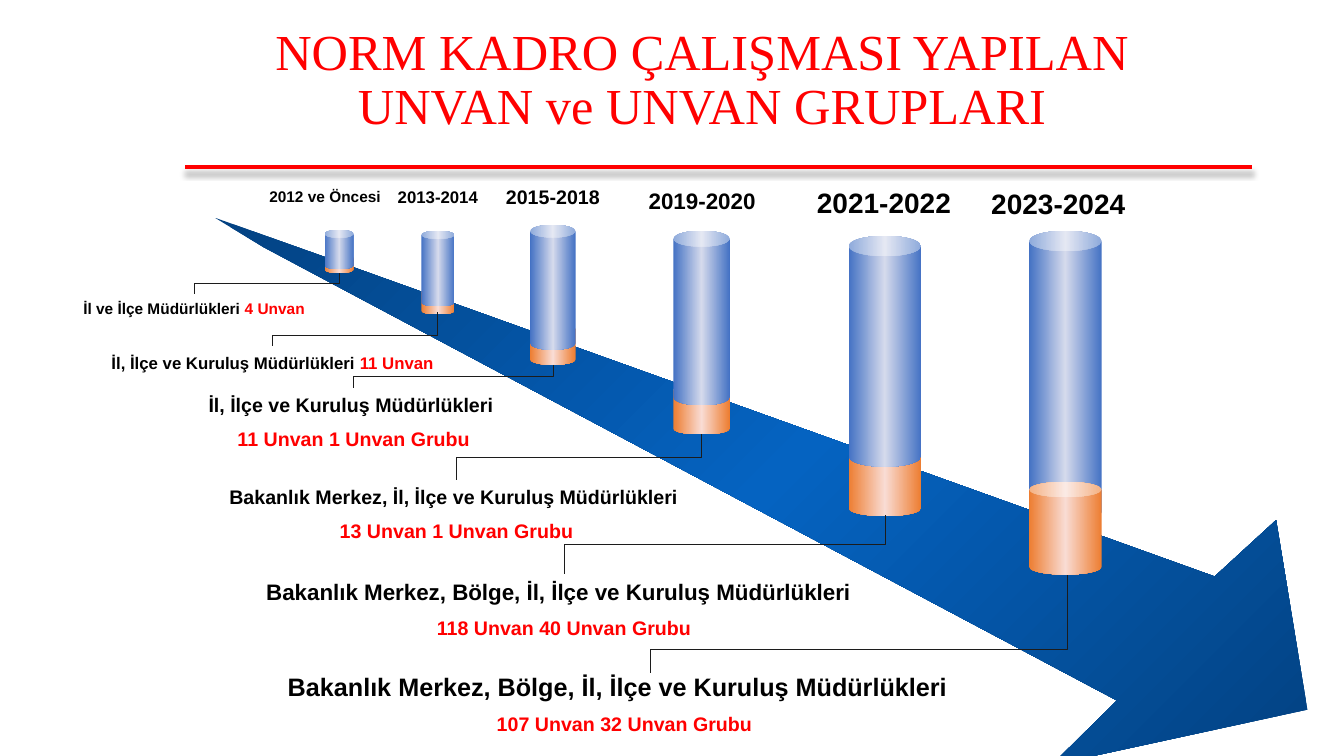
import copy

import lxml.etree
import pptx
import pptx.dml.color
import pptx.enum.shapes
import pptx.enum.text
import pptx.oxml
import pptx.oxml.ns
import pptx.util

Pt = pptx.util.Pt
qn = pptx.oxml.ns.qn
SHAPE = pptx.enum.shapes.MSO_SHAPE
LINE = pptx.enum.shapes.MSO_CONNECTOR
CENTER = pptx.enum.text.PP_ALIGN.CENTER

COLORS = {"red": "FF0000", "black": "000000", "leader": "1C1C1C",
          "navy": "034282", "azure": "0563C1",
          "blue": "4472C4", "blue_light": "D5DAEC",
          "orange": "ED7D31", "orange_light": "F9DCD4"}
BLUE = ("blue", "blue_light", "blue")
ORANGE = ("orange", "orange_light", "orange")

TITLE = ["NORM KADRO ÇALIŞMASI YAPILAN", "UNVAN ve UNVAN GRUPLARI"]
ARROW = [(228.2, 182.2), (153.4, 155.5), (187.9, 176.4), (797.8, 500.4),
         (751, 546.5), (933.8, 506.9), (911.5, 371.5), (867.6, 411.8)]

# period: text, size, (left, top, width, height)
# cans: left, width, then (top, height, curve) of the blue and the orange part
# note: box, then paragraphs of (text, size, color) runs
# leader: start x, start y, end x, end y, elbow y
STAGES = [
    {"period": ("2012 ve Öncesi", 11, (185, 130.3, 94.5, 20.9)),
     "cans": (231.8, 20.9, (164.2, 28.1, 0.27), (181.4, 13.7, 0.4)),
     "note": ((50.4, 210.2, 176.4, 20.9),
              [[("İl ve İlçe Müdürlükleri ", 11, "black"), ("4 Unvan", 11, "red")]]),
     "leader": (242.6, 195.1, 138.6, 210.2, 202.6)},
    {"period": ("2013-2014", 12, (274.3, 129.6, 77, 21.6)),
     "cans": (301, 23.8, (164.9, 54, 0.24), (205.9, 18.7, 0.27)),
     "note": ((66.2, 248.4, 257, 21.6),
              [[("İl, İlçe ve Kuruluş Müdürlükleri ", 12, "black"),
                ("11 Unvan", 12, "red")]]),
     "leader": (312.5, 223.2, 194.8, 247, 239.8)},
    {"period": ("2015-2018", 14, (347.8, 128.9, 94.3, 24.5)),
     "cans": (378.7, 32.4, (160.6, 89.3, 0.28), (231.1, 29.5, 0.25)),
     "note": ((141.1, 277.2, 223.2, 49.7),
              [[("İl, İlçe ve Kuruluş Müdürlükleri ", 14, "black")],
               [("11 Unvan 1 Unvan Grubu", 14, "red")]]),
     "leader": (395.3, 260.6, 252.7, 277.2, 268.9)},
    {"period": ("2019-2020", 16, (445.7, 130.3, 111.6, 26.6)),
     "cans": (481, 40.3, (164.9, 124.6, 0.28), (274.3, 36, 0.22)),
     "note": ((134.6, 342.7, 383, 49.7),
              [[("Bakanlık Merkez, İl, İlçe ve Kuruluş Müdürlükleri ", 14, "black")],
               [("13 Unvan 1 Unvan Grubu", 14, "red")]]),
     "leader": (501.1, 310.3, 326.2, 342.7, 326.5)},
    {"period": ("2021-2022", 20, (571.7, 128.9, 119.5, 31.7)),
     "cans": (606.2, 51.8, (168.5, 164.9, 0.28), (302.4, 66.2, 0.21)),
     "note": ((153.4, 409.7, 499, 51.8),
              [[("Bakanlık Merkez, Bölge, İl, İlçe ve Kuruluş Müdürlükleri", 16, "black"),
                ("  ", 14, "black")],
               [("118 Unvan 40 Unvan Grubu", 14, "red")]]),
     "leader": (632.2, 368, 403.2, 409.7, 388.8)},
    {"period": ("2023-2024", 20, (696.2, 129.6, 119.5, 31.7)),
     "cans": (735.1, 51.8, (164.9, 208.1, 0.28), (344.2, 66.2, 0.21)),
     "note": ((196.6, 475.9, 499, 54.7),
              [[("Bakanlık Merkez, Bölge, İl, İlçe ve Kuruluş Müdürlükleri  ", 18, "black")],
               [("107 Unvan 32 Unvan Grubu", 14, "red")]]),
     "leader": (762.6, 410, 464.4, 481, 463.8)},
]


def rgb(name):
    return pptx.dml.color.RGBColor.from_string(COLORS[name])


def paint_gradient(sp, names, angle):
    """Fill with three evenly spaced colours; angle runs clockwise."""
    sp.shadow.inherit = False
    sp.line.fill.background()
    sp.fill.gradient()
    sp.fill.gradient_angle = (360 - angle) % 360
    stops = sp._element.spPr.find(".//" + qn("a:gsLst"))
    stops.insert(1, copy.deepcopy(stops[0]))
    for i, (stop, name) in enumerate(zip(sp.fill.gradient_stops, names)):
        stop.position = i / 2
        stop.color.rgb = rgb(name)


def add_can(s, left, width, part, names):
    top, height, curve = part
    sp = s.shapes.add_shape(SHAPE.CAN, Pt(left), Pt(top), Pt(width), Pt(height))
    sp.adjustments[0] = curve
    paint_gradient(sp, names, 0)


def add_text(s, box, paragraphs):
    tf = s.shapes.add_textbox(*map(Pt, box)).text_frame
    tf.word_wrap = True
    tf.auto_size = pptx.enum.text.MSO_AUTO_SIZE.SHAPE_TO_FIT_TEXT
    for i, runs in enumerate(paragraphs):
        p = tf.add_paragraph() if i else tf.paragraphs[0]
        p.alignment = CENTER
        if i:
            p.space_before = Pt(7.5)
        for text, size, color in runs:
            add_run(p, text, size, color, "Arial", True)


def add_run(p, text, size, color, font, bold):
    r = p.add_run()
    r.text = text
    r.font.name = font
    r.font.size = Pt(size)
    r.font.bold = bold
    r.font.color.rgb = rgb(color)


def add_line(s, kind, ends, color, width):
    sp = s.shapes.add_connector(kind, *map(Pt, ends))
    sp.line.color.rgb = rgb(color)
    sp.line.width = Pt(width)
    effects = lxml.etree.SubElement(sp._element.spPr, qn("a:effectLst"))
    return sp, effects


def add_leader(s, x1, y1, x2, y2, elbow):
    """Down, left, down: an elbow connector turned by 90 degrees."""
    run, drop = x1 - x2, y2 - y1
    left, top = (x1 + x2 - drop) / 2, (y1 + y2 - run) / 2
    sp, _ = add_line(s, LINE.ELBOW, (left, top, left + drop, top + run), "leader", 0.75)
    spPr = sp._element.spPr
    spPr.find(qn("a:xfrm")).set("rot", "5400000")
    guides = spPr.find(qn("a:prstGeom")).find(qn("a:avLst"))
    bend = round((elbow - y1) / drop * 100000)
    lxml.etree.SubElement(guides, qn("a:gd"), name="adj1", fmla=f"val {bend}")


def add_title(s):
    sp = s.shapes.title
    sp.left, sp.top, sp.width, sp.height = map(Pt, (165.6, -1.4, 671.8, 118.8))
    tf = sp.text_frame
    tf.word_wrap = True
    tf.vertical_anchor = pptx.enum.text.MSO_ANCHOR.MIDDLE
    p = tf.paragraphs[0]
    p.alignment = CENTER
    p.line_spacing = 0.9
    for i, text in enumerate(TITLE):
        if i:
            p.add_line_break()
        add_run(p, text, 36, "red", "Times New Roman", False)


def add_title_rule(s):
    _, effects = add_line(s, LINE.STRAIGHT, (894.2, 119.5, 132.5, 119.5), "red", 3)
    shadow = lxml.etree.SubElement(effects, qn("a:outerShdw"), blurRad=str(Pt(4)),
                                   dist=str(Pt(4)), dir="5400000", rotWithShape="0")
    color = lxml.etree.SubElement(shadow, qn("a:srgbClr"), val=COLORS["black"])
    lxml.etree.SubElement(color, qn("a:alpha"), val="25000")


def add_arrow(s):
    start, *rest = [(Pt(x), Pt(y)) for x, y in ARROW]
    builder = s.shapes.build_freeform(*start)
    builder.add_line_segments(rest, close=True)
    paint_gradient(builder.convert_to_shape(), ("navy", "azure", "navy"), 45)


def main():
    prs = pptx.Presentation()
    prs.slide_width, prs.slide_height = Pt(960), Pt(540)
    s = prs.slides.add_slide(prs.slide_layouts[5])
    add_title_rule(s)
    add_title(s)
    add_arrow(s)
    for stage in STAGES:
        text, size, box = stage["period"]
        left, width, blue, orange = stage["cans"]
        is_last = stage is STAGES[-1]
        if not is_last:
            add_can(s, left, width, orange, ORANGE)
        add_text(s, box, [[(text, size, "black")]])
        add_text(s, *stage["note"])
        add_leader(s, *stage["leader"])
        add_can(s, left, width, blue, BLUE)
        if is_last:
            add_can(s, left, width, orange, ORANGE)
    prs.save("out.pptx")


if __name__ == "__main__":
    main()
